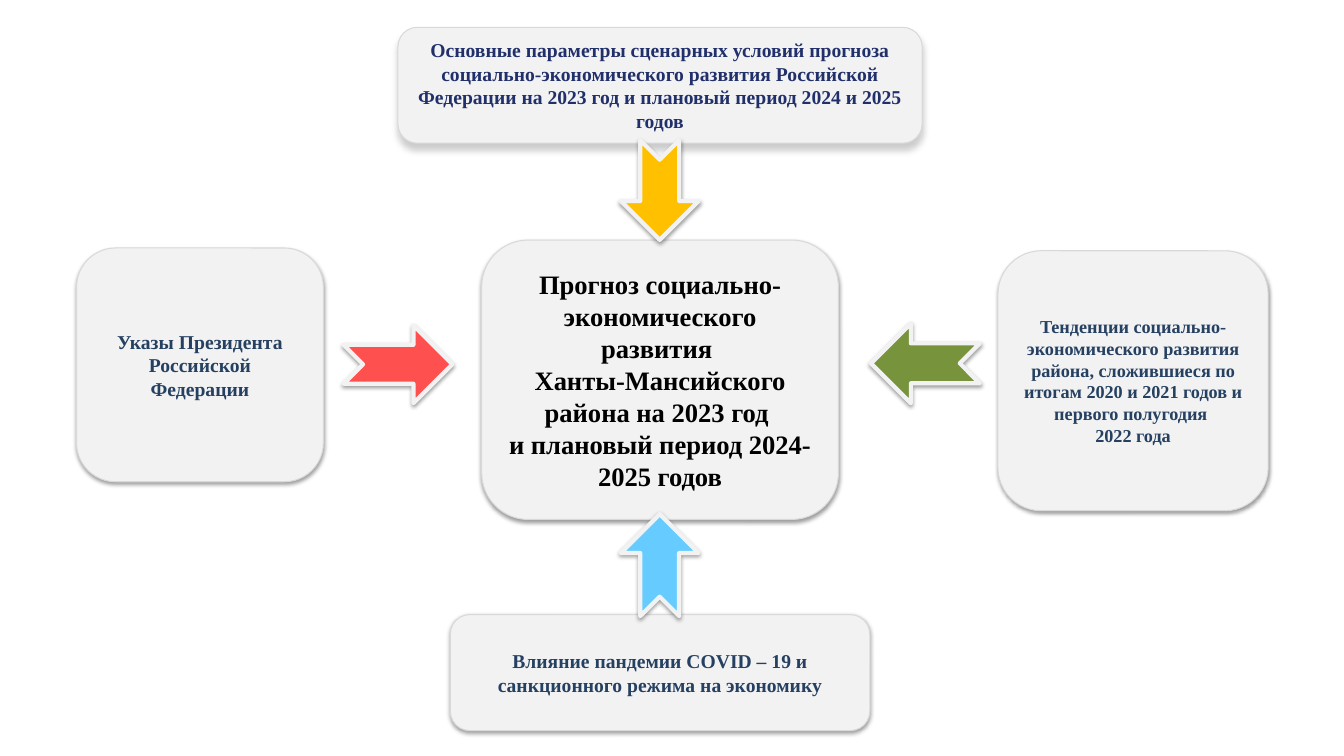
"""Build a slide on the factors behind a district development forecast."""
from lxml import etree
from pptx import Presentation
from pptx.dml.color import RGBColor
from pptx.enum.shapes import MSO_SHAPE
from pptx.enum.text import MSO_ANCHOR, PP_ALIGN
from pptx.oxml.ns import qn
from pptx.util import Cm, Pt

ROUNDED = MSO_SHAPE.ROUNDED_RECTANGLE
NOTCHED_ARROW = MSO_SHAPE.NOTCHED_RIGHT_ARROW
MIDDLE = MSO_ANCHOR.MIDDLE
CENTER = PP_ALIGN.CENTER

PALE = RGBColor(0xF2, 0xF2, 0xF2)
BORDER = RGBColor(0xD9, 0xD9, 0xD9)
BLACK = RGBColor(0x00, 0x00, 0x00)
INDIGO = RGBColor(0x21, 0x30, 0x6A)
NAVY = RGBColor(0x25, 0x40, 0x61)
AMBER = RGBColor(0xFF, 0xC0, 0x00)
RED = RGBColor(0xFF, 0x50, 0x50)
GREEN = RGBColor(0x77, 0x93, 0x3C)
SKY = RGBColor(0x66, 0xCC, 0xFF)

CLOSE_SHADOW = (38, 3.1, 1.6)
DEEP_SHADOW = (20, 5, 4)

BOXES = [
    ((10.03, 0.69, 13.21, 2.92), 14, INDIGO, DEEP_SHADOW, [
        "Основные параметры сценарных условий прогноза "
        "социально-экономического развития Российской Федерации "
        "на 2023 год и плановый период 2024 и 2025 годов"]),
    ((12.14, 6.05, 8.99, 7.04), 19, BLACK, CLOSE_SHADOW, [
        "Прогноз социально-экономического развития ",
        "Ханты-Мансийского района на 2023 год ",
        "и плановый период 2024-2025 годов"]),
    ((1.93, 6.25, 6.22, 5.89), 14, NAVY, CLOSE_SHADOW, [
        "Указы Президента Российской Федерации"]),
    ((11.35, 15.49, 10.57, 2.92), 14, NAVY, CLOSE_SHADOW, [
        "Влияние пандемии COVID – 19 и санкционного режима на экономику"]),
    ((25.15, 6.32, 6.81, 6.55), 13, NAVY, CLOSE_SHADOW, [
        "Тенденции социально-экономического развития района, сложившиеся "
        "по итогам 2020 и 2021 годов и первого полугодия ",
        "2022 года"]),
]

ARROWS = [
    ((15.37, 3.81, 2.51, 1.96), 90, AMBER),
    ((8.66, 8.2, 2.74, 1.96), 0, RED),
    ((21.95, 8.15, 2.74, 2.01), 180, GREEN),
    ((15.34, 13.26, 2.57, 1.96), 270, SKY),
]


class ForecastSlide:
    """Hold the slide and its style, and draw boxes and arrows."""

    font_name = "Times New Roman"

    def __init__(self, deck):
        """Add a blank page to the deck."""
        self.page = deck.slides.add_slide(deck.slide_layouts[6])

    def shape(self, kind, place, fill, border, width, shadow):
        """Add a filled, outlined shape with a shadow beneath it."""
        shape = self.page.shapes.add_shape(kind, *map(Cm, place))
        shape.fill.solid()
        shape.fill.fore_color.rgb = fill
        shape.line.color.rgb = border
        shape.line.width = Pt(width)
        self.cast_shadow(shape, *shadow)
        return shape

    def cast_shadow(self, shape, opacity, blur, distance):
        """Give the shape a black shadow that falls straight down."""
        shape.shadow.inherit = False
        effects = shape._element.spPr.find(qn("a:effectLst"))
        outer = etree.SubElement(effects, qn("a:outerShdw"), {
            "blurRad": str(Pt(blur)), "dist": str(Pt(distance)),
            "dir": "5400000", "algn": "ctr", "rotWithShape": "0"})
        color = etree.SubElement(outer, qn("a:srgbClr"), {"val": str(BLACK)})
        etree.SubElement(color, qn("a:alpha"), {"val": str(opacity * 1000)})

    def box(self, place, size, color, shadow, lines):
        """Add a rounded box with bold centred paragraphs."""
        frame = self.shape(ROUNDED, place, PALE, BORDER, 0.75, shadow).text_frame
        frame.word_wrap = True
        frame.vertical_anchor = MIDDLE
        style = {"name": self.font_name, "size": Pt(size), "bold": True}
        for index, line in enumerate(lines):
            para = frame.add_paragraph() if index else frame.paragraphs[0]
            para.alignment = CENTER
            span = para.add_run()
            span.text = line
            for name, value in style.items():
                setattr(span.font, name, value)
            span.font.color.rgb = color

    def arrow(self, place, rotation, fill):
        """Add a notched arrow turned towards the central box."""
        arrow = self.shape(NOTCHED_ARROW, place, fill, PALE, 3, CLOSE_SHADOW)
        arrow.rotation = rotation


def main():
    """Draw the forecast slide and save the deck."""
    deck = Presentation()
    deck.slide_width, deck.slide_height = Cm(33.87), Cm(19.05)
    slide = ForecastSlide(deck)
    for box in BOXES:
        slide.box(*box)
    for arrow in ARROWS:
        slide.arrow(*arrow)
    deck.save("out.pptx")


if __name__ == "__main__":
    main()
